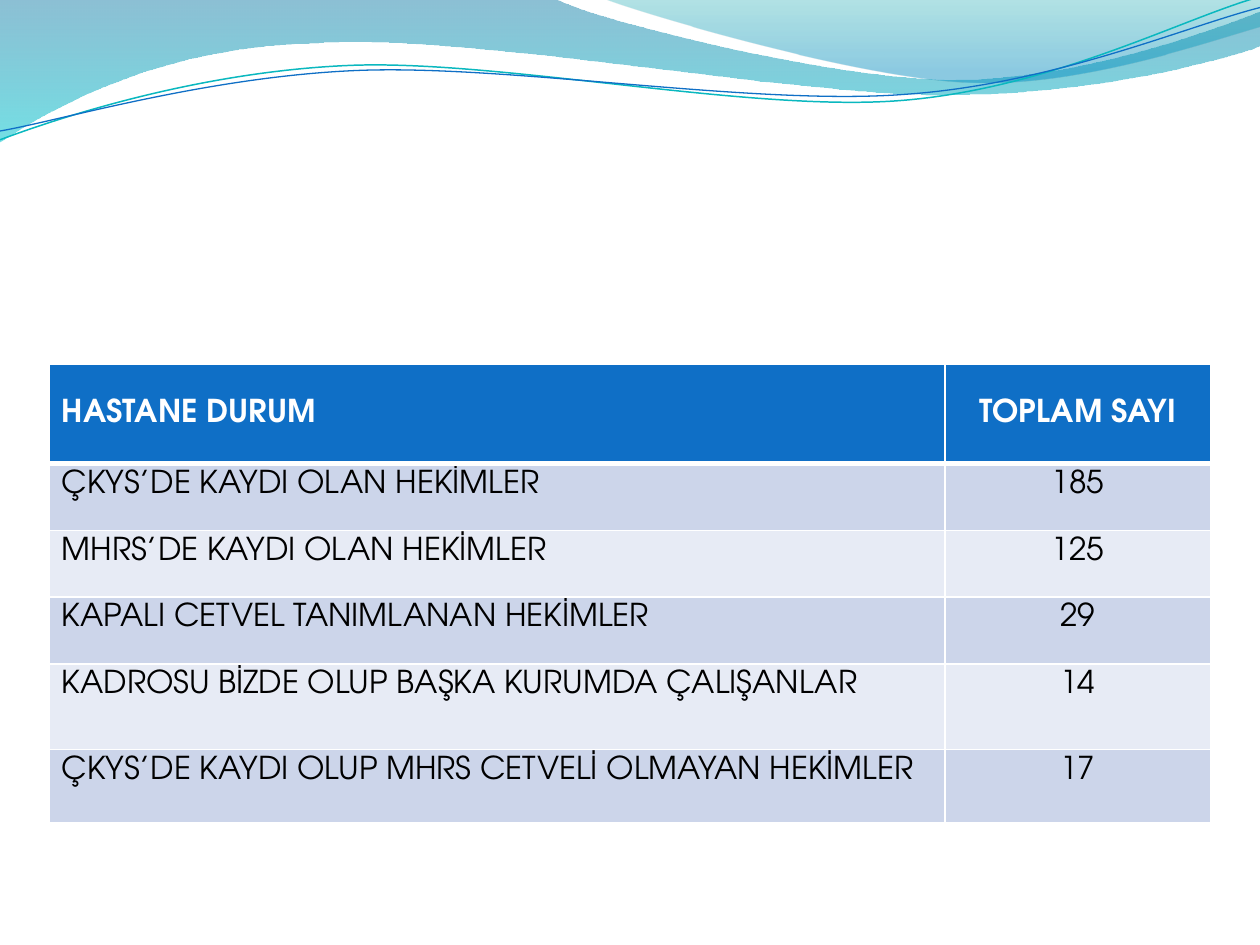
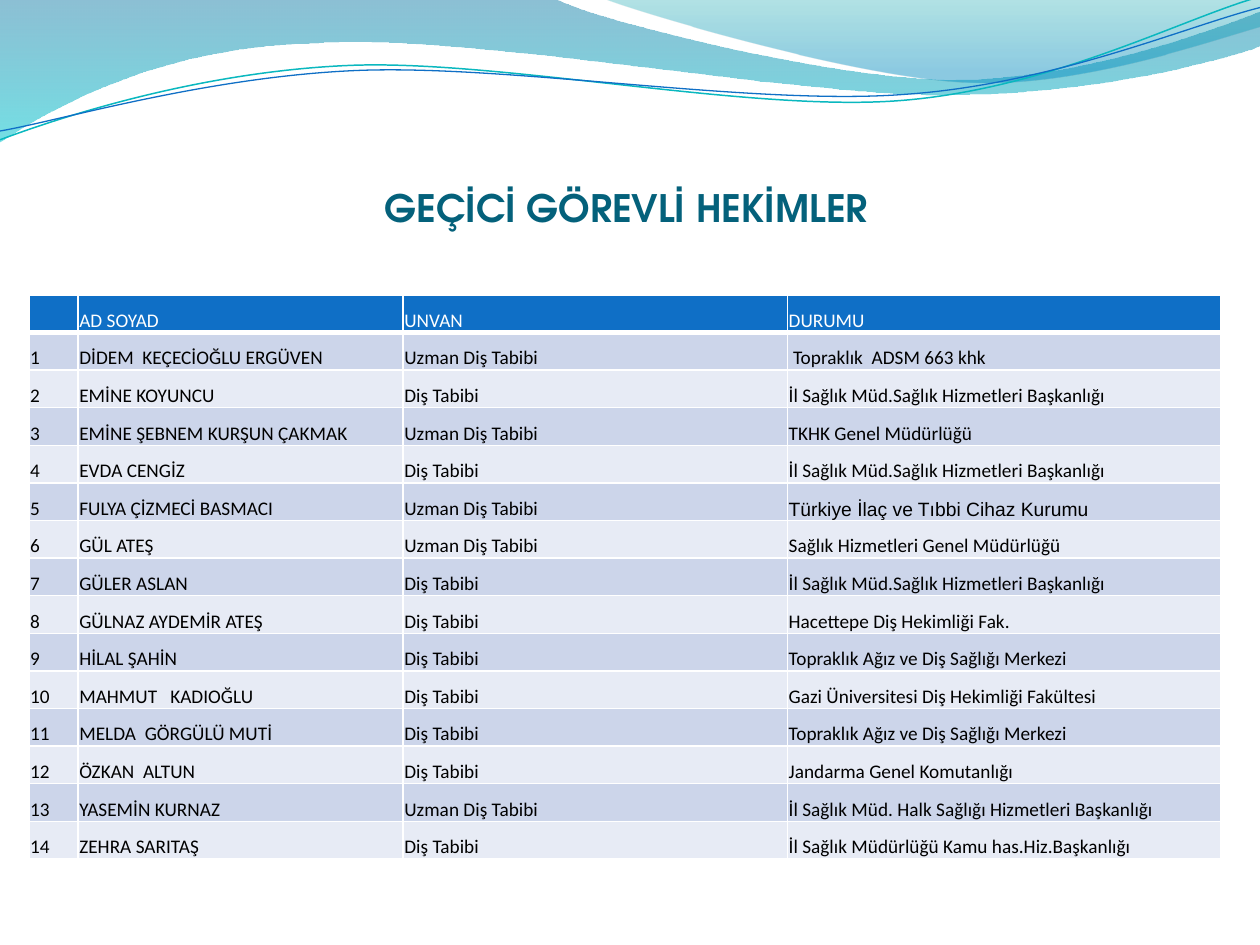
import pptx
import pptx.dml.color
import pptx.enum.text
import pptx.oxml
import pptx.oxml.ns
import pptx.util
from dataclasses import dataclass
from pptx.util import Inches

HOSPITAL_STATUS = [
    ("HASTANE DURUM", "TOPLAM SAYI"),
    ("ÇKYS’DE KAYDI OLAN HEKİMLER", "185"),
    ("MHRS’DE KAYDI OLAN HEKİMLER", "125"),
    ("KAPALI CETVEL TANIMLANAN HEKİMLER", "29"),
    ("KADROSU BİZDE OLUP BAŞKA KURUMDA ÇALIŞANLAR", "14"),
    ("ÇKYS’DE KAYDI OLUP MHRS CETVELİ OLMAYAN HEKİMLER", "17"),
]

DOCTORS_TITLE = "GEÇİCİ GÖREVLİ HEKİMLER"
DOCTORS_HEADER = ("", "AD SOYAD", "UNVAN", "DURUMU")
DENTIST = "Diş Tabibi"
SPECIALIST = "Uzman Diş Tabibi"
HEALTH_SERVICES = "İl Sağlık Müd.Sağlık Hizmetleri Başkanlığı"
DENTAL_CENTRE = "Topraklık Ağız ve Diş Sağlığı Merkezi"
DEVICE_AGENCY = "Türkiye İlaç ve Tıbbi Cihaz Kurumu"
DOCTORS = [
    ("DİDEM  KEÇECİOĞLU ERGÜVEN", SPECIALIST, " Topraklık  ADSM 663 khk"),
    ("EMİNE KOYUNCU", DENTIST, HEALTH_SERVICES),
    ("EMİNE ŞEBNEM KURŞUN ÇAKMAK", SPECIALIST, "TKHK Genel Müdürlüğü"),
    ("EVDA CENGİZ", DENTIST, HEALTH_SERVICES),
    ("FULYA ÇİZMECİ BASMACI", SPECIALIST, DEVICE_AGENCY),
    ("GÜL ATEŞ", SPECIALIST, "Sağlık Hizmetleri Genel Müdürlüğü"),
    ("GÜLER ASLAN", DENTIST, HEALTH_SERVICES),
    ("GÜLNAZ AYDEMİR ATEŞ", DENTIST, "Hacettepe Diş Hekimliği Fak."),
    ("HİLAL ŞAHİN", DENTIST, DENTAL_CENTRE),
    ("MAHMUT   KADIOĞLU", DENTIST, "Gazi Üniversitesi Diş Hekimliği Fakültesi"),
    ("MELDA  GÖRGÜLÜ MUTİ", DENTIST, DENTAL_CENTRE),
    ("ÖZKAN  ALTUN", DENTIST, "Jandarma Genel Komutanlığı"),
    ("YASEMİN KURNAZ", SPECIALIST, "İl Sağlık Müd. Halk Sağlığı Hizmetleri Başkanlığı"),
    ("ZEHRA SARITAŞ", DENTIST, "İl Sağlık Müdürlüğü Kamu has.Hiz.Başkanlığı"),
]


@dataclass(frozen=True)
class Theme:
    header: str = "0F6FC6"
    bands: tuple = ("CCD5EA", "E7EBF5")
    white: str = "FFFFFF"
    black: str = "000000"
    title: str = "04617B"
    heading_font: str = "TeX Gyre Adventor"
    list_font: str = "Calibri"
    agency_font: str = "Arial"
    title_size: float = 21.6
    status_size: float = 18
    list_size: float = 11
    rule: float = 1
    header_rule: float = 3


T = Theme()

WAVE_FILLS = [
    ([(0, 0), (4.4, -0.01), (4.76, 0.17, 6.64, 0.63, 7.58, 0.63),
      (8.53, 0.63, 9.58, 0.26, 10, 0.09), (10.01, 0.36),
      (9.83, 0.44, 8.7, 0.76, 7.46, 0.75), (6.22, 0.75, 3.82, 0.28, 2.57, 0.34),
      (1.29, 0.36, 0.46, 0.83, -0.01, 1.13), (0, 0)],
     [(0, "0074A1", 45), (1, "00C6CF", 55)]),
    ([(4.79, -0.01), (5.09, 0.11, 6.82, 0.62, 7.69, 0.65),
      (8.56, 0.69, 9.61, 0.32, 10, 0.21), (10, 0), (4.79, -0.01)],
     [(0, "00A1A9", 30), (0.8, "008BBF", 45)]),
]
WAVE_LINES = [
    ([(0, 1.11), (0.48, 0.93, 1.58, 0.57, 2.77, 0.52),
      (3.95, 0.47, 5.93, 0.89, 7.13, 0.8), (8.33, 0.71, 9.38, 0.15, 9.98, -0.02)],
     "0AB8BF", 0.85),
    ([(0, 1.04), (0.47, 0.96, 1.64, 0.61, 2.83, 0.56),
      (4.03, 0.51, 5.97, 0.84, 7.17, 0.75), (8.36, 0.67, 9.41, 0.21, 10, 0.06)],
     "0F6FC6", 0.75),
]


def rgb(value):
    return pptx.dml.color.RGBColor.from_string(value)


def bend(sp, segments):
    steps = iter(list(sp._element.spPr.iter(pptx.oxml.ns.qn("a:lnTo"))))
    for seg in segments[1:]:
        step = next(steps)
        if len(seg) == 6:
            curve = pptx.oxml.parse_xml(f'<a:cubicBezTo {pptx.oxml.ns.nsdecls("a")}/>')
            step.addprevious(curve)
            for corner in (step, next(steps), next(steps)):
                curve.append(corner[0])
                corner.getparent().remove(corner)


def add_outline(s, segments, close):
    points = [(Inches(x), Inches(y)) for seg in segments
              for x, y in zip(seg[::2], seg[1::2])]
    builder = s.shapes.build_freeform(*points[0])
    builder.add_line_segments(points[1:], close=close)
    sp = builder.convert_to_shape()
    bend(sp, segments)
    sp.shadow.inherit = False
    return sp


def add_waves(s):
    for segments, stops in WAVE_FILLS:
        sp = add_outline(s, segments, True)
        sp.line.fill.background()
        sp.fill.gradient()
        sp.fill.gradient_angle = 270
        for stop, (position, color, _) in zip(sp.fill.gradient_stops, stops):
            stop.position = position
            stop.color.rgb = rgb(color)
        for clr, (_, _, opacity) in zip(sp._element.spPr.iter(pptx.oxml.ns.qn("a:srgbClr")), stops):
            clr.append(pptx.oxml.parse_xml(
                f'<a:alpha {pptx.oxml.ns.nsdecls("a")} val="{opacity * 1000}"/>'))
    for segments, color, width in WAVE_LINES:
        sp = add_outline(s, segments, False)
        sp.fill.background()
        sp.line.color.rgb = rgb(color)
        sp.line.width = pptx.util.Pt(width)


def set_borders(cell, top, bottom):
    widths = {"lnL": T.rule, "lnR": T.rule, "lnT": top, "lnB": bottom}
    for i, (side, width) in enumerate(widths.items()):
        cell._tc.get_or_add_tcPr().insert(i, pptx.oxml.parse_xml(
            f'<a:{side} {pptx.oxml.ns.nsdecls("a")} w="{pptx.util.Pt(width)}">'
            f'<a:solidFill><a:srgbClr val="{T.white}"/></a:solidFill></a:{side}>'))


def style_text(p, font, size, color, bold=False):
    p.font.name = font
    p.font.size = pptx.util.Pt(size)
    p.font.color.rgb = rgb(color)
    p.font.bold = bold


def add_banded_table(s, rows, left, top, widths, heights, margins, font, size,
                     bold_header, anchors, centred=()):
    table = s.shapes.add_table(len(rows), len(widths), Inches(left), Inches(top),
                               Inches(sum(widths)), Inches(sum(heights))).table
    for column, width in zip(table.columns, widths):
        column.width = Inches(width)
    for r, (texts, height) in enumerate(zip(rows, heights)):
        table.rows[r].height = Inches(height)
        is_header = r == 0
        for c, text in enumerate(texts):
            cell = table.cell(r, c)
            cell.margin_left, cell.margin_top, cell.margin_right, cell.margin_bottom = map(Inches, margins)
            cell.vertical_anchor = anchors[0 if is_header else 1]
            cell.fill.solid()
            cell.fill.fore_color.rgb = rgb(T.header if is_header else T.bands[(r - 1) % 2])
            set_borders(cell, T.header_rule if r == 1 else T.rule,
                        T.header_rule if is_header else T.rule)
            p = cell.text_frame.paragraphs[0]
            p.text = text
            style_text(p, T.agency_font if text == DEVICE_AGENCY else font, size,
                       T.white if is_header else T.black, is_header and bold_header)
            if c in centred:
                p.alignment = pptx.enum.text.PP_ALIGN.CENTER


def add_title(s, text):
    tf = s.shapes.add_textbox(Inches(0.47), Inches(1.42), Inches(9), Inches(0.78)).text_frame
    tf.word_wrap = True
    tf.margin_left = tf.margin_right = tf.margin_bottom = 0
    p = tf.paragraphs[0]
    p.text = text
    p.alignment = pptx.enum.text.PP_ALIGN.CENTER
    style_text(p, T.heading_font, T.title_size, T.title, True)


def new_slide(prs):
    s = prs.slides.add_slide(prs.slide_layouts[6])
    add_waves(s)
    return s


def main():
    prs = pptx.Presentation()
    prs.slide_width, prs.slide_height = Inches(10), Inches(7.5)
    anchor = pptx.enum.text.MSO_ANCHOR

    s = new_slide(prs)
    add_banded_table(s, HOSPITAL_STATUS, 0.39, 2.89, (7.11, 2.11),
                     (0.79, 0.53, 0.53, 0.53, 0.68, 0.58), (0.1, 0.05, 0.1, 0.05),
                     T.heading_font, T.status_size, True,
                     (anchor.MIDDLE, anchor.TOP), centred=(1,))

    s = new_slide(prs)
    add_title(s, DOCTORS_TITLE)
    rows = [DOCTORS_HEADER] + [(str(i), *doctor) for i, doctor in enumerate(DOCTORS, 1)]
    add_banded_table(s, rows, 0.23, 2.34, (0.39, 2.58, 3.05, 3.44),
                     [4.48 / len(rows)] * len(rows), (0.01, 0.01, 0.01, 0),
                     T.list_font, T.list_size, False, (anchor.BOTTOM, anchor.BOTTOM))

    prs.save("out.pptx")


if __name__ == "__main__":
    main()
